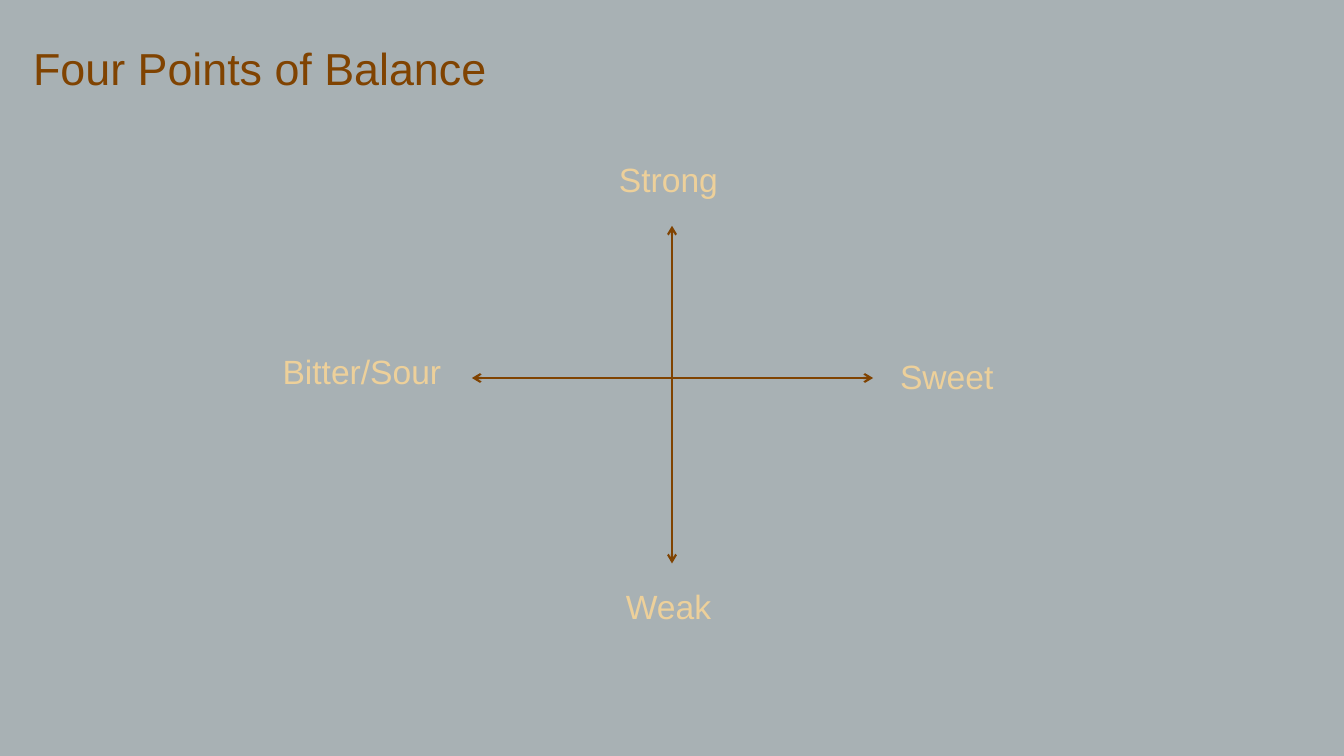
from lxml import etree
from pptx import Presentation
from pptx.dml.color import RGBColor
from pptx.enum.shapes import MSO_CONNECTOR
from pptx.enum.text import MSO_AUTO_SIZE, PP_ALIGN
from pptx.oxml.ns import qn
from pptx.util import Inches, Pt

STRAIGHT = MSO_CONNECTOR.STRAIGHT
GROW = MSO_AUTO_SIZE.SHAPE_TO_FIT_TEXT
LEFT, CENTER = PP_ALIGN.LEFT, PP_ALIGN.CENTER

TITLE = ("Four Points of Balance", 0.23, 0.36)
LABELS = [
    ("Strong", 5.25, 1.53),
    ("Weak", 5.25, 5.76),
    ("Bitter/Sour", 2.21, 3.43),
    ("Sweet", 8.01, 3.48),
]
WIDE, HIGH = 13.33, 7.5
MID_X, MID_Y = WIDE / 2, HIGH / 2
AXES = [
    (MID_X, 2.24, MID_X, 5.59),
    (4.68, MID_Y, 8.66, MID_Y),
]
THEME = {
    "back": RGBColor.from_string("A8B1B4"),
    "line": RGBColor.from_string("804301"),
    "width": Pt(1.5),
    "title": {
        "size": (9.48, 0.64),
        "align": LEFT,
        "font": {"name": "Arial", "size": Pt(32)},
        "color": RGBColor.from_string("804301"),
    },
    "label": {
        "size": (2.76, 0.5),
        "align": CENTER,
        "font": {"name": "Arial", "size": Pt(24)},
        "color": RGBColor.from_string("EDD09A"),
    },
}


def add_text(slide, text, left, top, style):
    box = slide.shapes.add_textbox(*map(Inches, (left, top, *style["size"])))
    frame = box.text_frame
    frame.word_wrap = True
    frame.auto_size = GROW
    para = frame.paragraphs[0]
    para.alignment = style["align"]
    run = para.add_run()
    run.text = text
    for key, value in style["font"].items():
        setattr(run.font, key, value)
    run.font.color.rgb = style["color"]


def add_axis(slide, ends):
    axis = slide.shapes.add_connector(STRAIGHT, *map(Inches, ends))
    axis.line.color.rgb = THEME["line"]
    axis.line.width = THEME["width"]
    edge = axis.line._get_or_add_ln()
    for tip in ("a:headEnd", "a:tailEnd"):
        etree.SubElement(edge, qn(tip), type="arrow")
    etree.SubElement(axis._element.spPr, qn("a:effectLst"))


def main():
    deck = Presentation()
    deck.slide_width, deck.slide_height = Inches(WIDE), Inches(HIGH)
    slide = deck.slides.add_slide(deck.slide_layouts[6])
    fill = slide.background.fill
    fill.solid()
    fill.fore_color.rgb = THEME["back"]
    add_text(slide, *TITLE, THEME["title"])
    for ends in AXES:
        add_axis(slide, ends)
    for label in LABELS:
        add_text(slide, *label, THEME["label"])
    deck.save("out.pptx")


if __name__ == "__main__":
    main()
